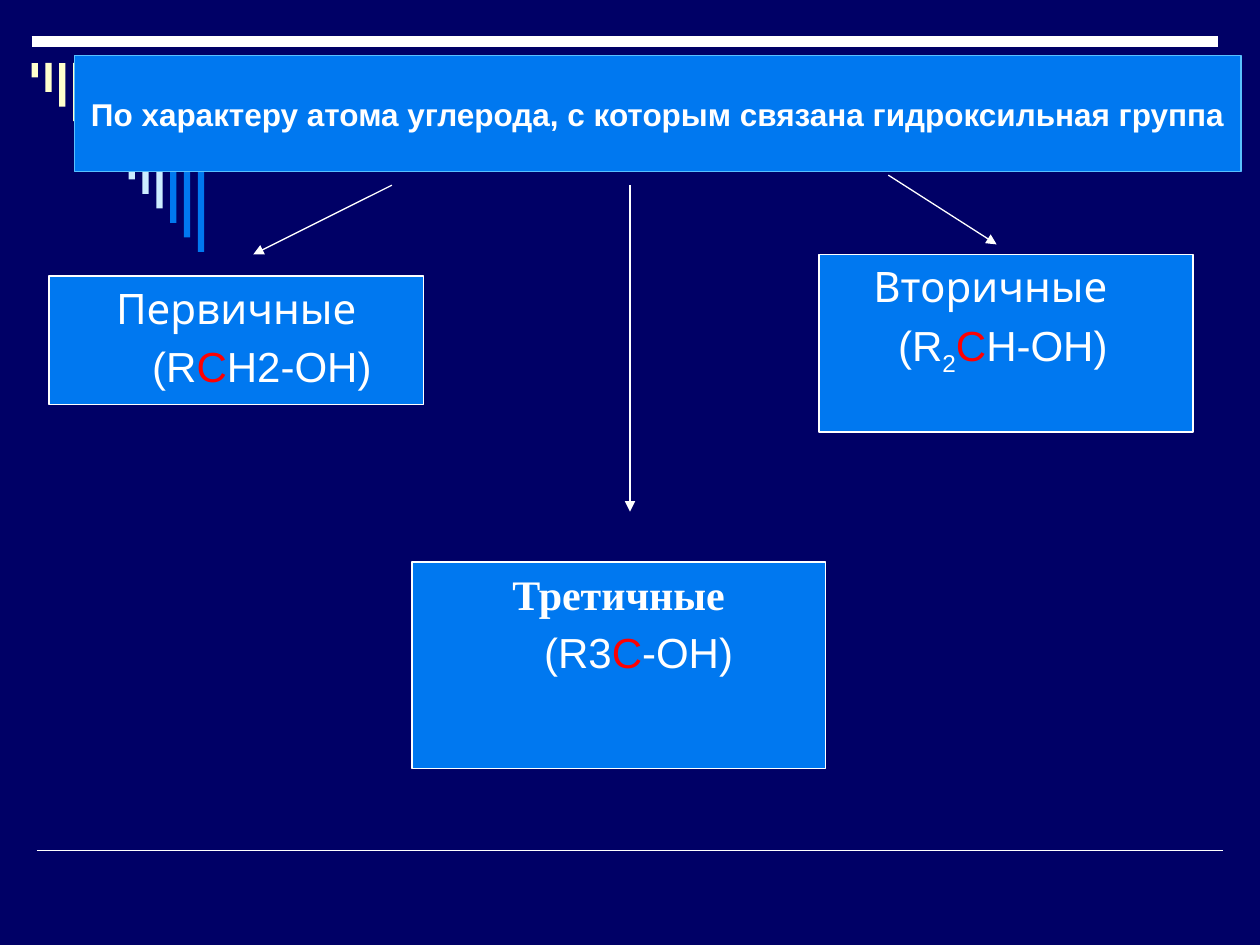
from dataclasses import dataclass

from pptx import Presentation
from pptx import util as u
from pptx.dml.color import RGBColor
from pptx.enum import shapes, text
from pptx.oxml.ns import qn
from lxml import etree


@dataclass(frozen=True)
class Theme:
    night: str = "000066"
    blue: str = "0078F0"
    sky: str = "59C1FF"
    ice: str = "CCECFF"
    cream: str = "FFFFCC"
    white: str = "FFFFFF"
    accent: str = "FF0000"
    font: str = "Arial"
    title_size: float = 18
    body_size: float = 24
    hairline: float = 0.75


def apply(target, values):
    for name, value in values.items():
        setattr(target, name, value)


def inches(*lengths):
    return [u.Inches(length) for length in lengths]


class ClassificationSlide:
    def __init__(self, slide, theme):
        self.slide = slide
        self.theme = theme
        self.paint(slide.background.fill, theme.night)

    def paint(self, fill, color):
        fill.solid()
        fill.fore_color.rgb = RGBColor.from_string(color)

    def outline(self, line, color, width):
        self.paint(line.fill, color)
        line.width = u.Pt(width)

    def frame(self, shape, **values):
        apply(shape.text_frame, {"auto_size": text.MSO_AUTO_SIZE.NONE, **values})

    def run(self, paragraph, words, color=None, size=None, **font_values):
        run = paragraph.add_run()
        run.text = words
        apply(run.font, {"name": self.theme.font,
                         "size": u.Pt(size or self.theme.body_size),
                         "bold": False, **font_values})
        run.font.color.rgb = RGBColor.from_string(color or self.theme.white)
        return run

    def line(self, start, end, width, arrow=False):
        line = self.slide.shapes.add_connector(
            shapes.MSO_CONNECTOR.STRAIGHT, *inches(*start, *end))
        self.outline(line.line, self.theme.white, width)
        if arrow:
            etree.SubElement(line.line._get_or_add_ln(), qn("a:tailEnd"), type="triangle")
        etree.SubElement(line._element.spPr, qn("a:effectLst"))

    def block(self, box, color):
        block = self.slide.shapes.add_shape(shapes.MSO_SHAPE.RECTANGLE, *inches(*box))
        block.shadow.inherit = False
        self.paint(block.fill, color)
        block.line.fill.background()
        return block

    def stripes(self, left, top, step, width, tallest):
        """Draw the growing stripes, leaving out those the banner hides."""
        colors = ([self.theme.cream] * 4 + [None] * 3
                  + [self.theme.ice] * 3 + [self.theme.blue] * 3)
        for index, color in enumerate(colors):
            if color:
                height = tallest * (index + 1) / len(colors)
                self.block((left + index * step, top, width, height), color)

    def banner(self, box, words):
        title = self.slide.shapes.title
        apply(title, dict(zip(("left", "top", "width", "height"), inches(*box))))
        self.paint(title.fill, self.theme.blue)
        self.outline(title.line, self.theme.sky, self.theme.hairline)
        self.frame(title, word_wrap=False, vertical_anchor=text.MSO_ANCHOR.MIDDLE)
        heading = title.text_frame.paragraphs[0]
        heading.alignment = text.PP_ALIGN.CENTER
        self.run(heading, words, size=self.theme.title_size, bold=True)
        # The banner must cover the stripes
        self.slide.shapes._spTree.append(title._element)

    def card(self, box, kind, formula, indent, shift=0, **kind_font):
        """Draw a class of alcohols; formula is (before, subscript, carbon, after)."""
        card = self.block(box, self.theme.blue)
        self.outline(card.line, self.theme.white, self.theme.hairline)
        self.frame(card, word_wrap=True, vertical_anchor=text.MSO_ANCHOR.TOP)
        heading = card.text_frame.paragraphs[0]
        heading.alignment = text.PP_ALIGN.CENTER
        heading._p.get_or_add_pPr().set("marR", str(u.Inches(shift)))
        self.run(heading, kind, **kind_font)

        structure = card.text_frame.add_paragraph()
        apply(structure, {"alignment": text.PP_ALIGN.LEFT, "space_before": u.Pt(4.8)})
        structure._p.get_or_add_pPr().set("marL", str(u.Inches(indent)))
        before, subscript, carbon, after = formula
        self.run(structure, before)
        if subscript:
            lowered = self.run(structure, subscript)
            lowered.font._element.set("baseline", "-25000")
        self.run(structure, carbon, self.theme.accent)
        self.run(structure, after)


def main():
    deck = Presentation()
    apply(deck, {"slide_width": u.Inches(10), "slide_height": u.Inches(7.5)})
    theme = Theme()
    page = ClassificationSlide(deck.slides.add_slide(deck.slide_layouts[5]), theme)

    page.line((0.29, 6.75), (9.71, 6.75), 1)
    page.line((0.25, 0.33), (9.67, 0.33), 6)
    page.stripes(left=0.25, top=0.5, step=0.11, width=0.05, tallest=1.5)
    page.banner((0.59, 0.44, 9.26, 0.92),
                "По характеру атома углерода, с которым связана гидроксильная группа")

    page.card((0.39, 2.19, 2.97, 1.02), "Первичные",
              ("(R", "", "C", "H2-OH)"), indent=0.72, name="Karla")
    page.card((6.5, 2.02, 2.97, 1.41), "Вторичные",
              ("(R", "2", "C", "H-OH)"), indent=0.53, shift=0.25, name="Karla")
    page.card((3.27, 4.46, 3.28, 1.64), "Третичные",
              ("(R3", "", "С", "-ОН)"), indent=0.95, name="Times New Roman", bold=True)

    for start, end in (((3.11, 1.47), (2.01, 2.02)),
                       ((7.05, 1.39), (7.91, 1.94)),
                       ((5, 1.47), (5, 4.06))):
        page.line(start, end, theme.hairline, arrow=True)

    deck.save("out.pptx")


if __name__ == "__main__":
    main()
